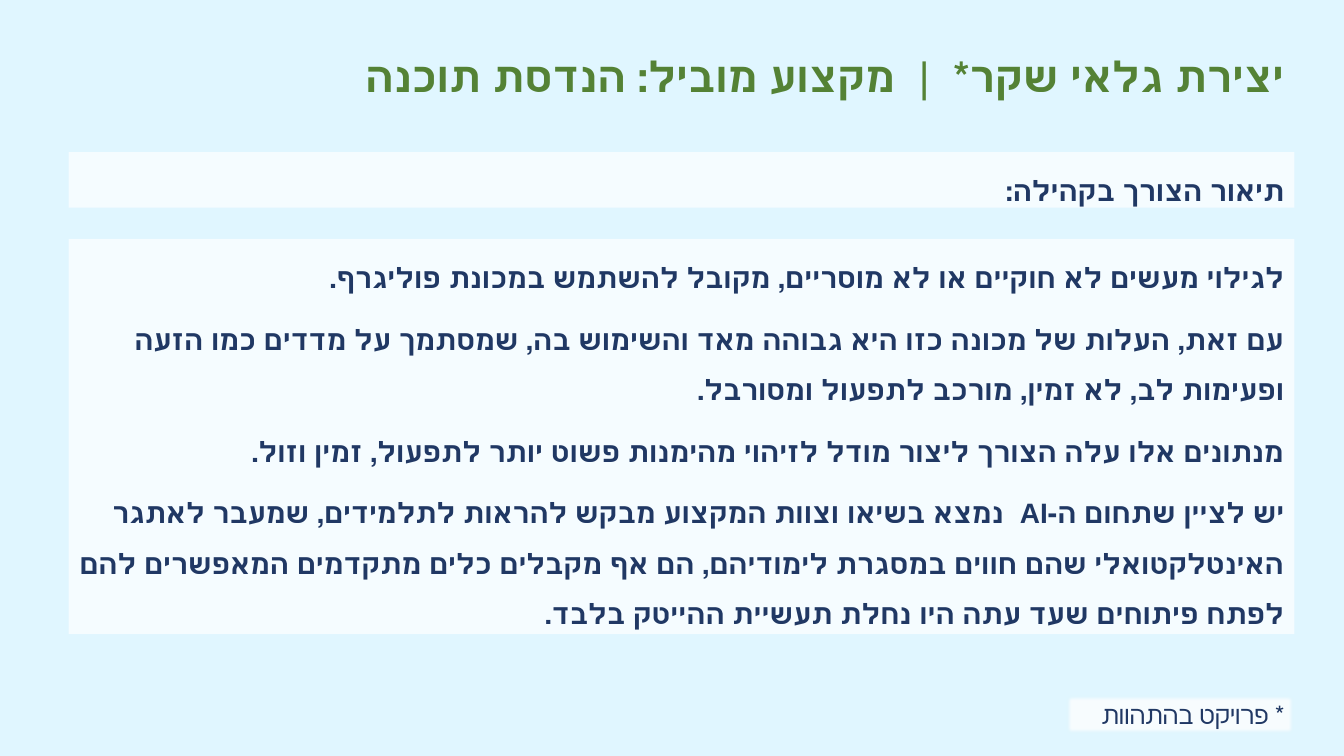
"""Builds the Hebrew slide that presents the lie detector project."""
from lxml.etree import SubElement
from pptx import Presentation
from pptx.dml.color import RGBColor
from pptx.enum.shapes import MSO_SHAPE
from pptx.enum.text import MSO_ANCHOR, MSO_AUTO_SIZE, PP_ALIGN
from pptx.oxml.ns import qn
from pptx.util import Inches, Pt

BACKGROUND = RGBColor(0xE0, 0xF6, 0xFF)
GREEN = RGBColor(0x54, 0x82, 0x35)
NAVY = RGBColor(0x20, 0x38, 0x64)
WHITE = RGBColor(0xFF, 0xFF, 0xFF)
FONT = "Arial"
RIGHT_EDGE = 12.84


def write(frame, paragraphs, size=20, color=NAVY, bold=True, spacing=None, after=0):
    frame.word_wrap = True
    frame.auto_size = MSO_AUTO_SIZE.NONE
    frame.vertical_anchor = MSO_ANCHOR.TOP
    for index, text in enumerate(paragraphs):
        paragraph = frame.paragraphs[0] if index == 0 else frame.add_paragraph()
        paragraph.alignment = PP_ALIGN.RIGHT
        paragraph._p.get_or_add_pPr().set("rtl", "1")
        paragraph.line_spacing = spacing
        paragraph.space_after = Pt(after)
        run = paragraph.add_run()
        run.text = text
        run.font.name = FONT
        run.font.size = Pt(size)
        run.font.bold = bold
        run.font.color.rgb = color


presentation = Presentation()
presentation.slide_width = Inches(13.33)
presentation.slide_height = Inches(7.5)
slide = presentation.slides.add_slide(presentation.slide_layouts[5])
slide.background.fill.solid()
slide.background.fill.fore_color.rgb = BACKGROUND

headline = slide.shapes.title
headline.left, headline.top = Inches(1.93), Inches(0.45)
headline.width, headline.height = Inches(10.91), Inches(0.61)
write(headline.text_frame, ["יצירת גלאי שקר*  |  מקצוע מוביל: הנדסת תוכנה"],
      size=30, color=GREEN)

need_heading = ["תיאור הצורך בקהילה:"]
need_description = [
    "לגילוי מעשים לא חוקיים או לא מוסריים, מקובל להשתמש במכונת פוליגרף.",
    "עם זאת, העלות של מכונה כזו היא גבוהה מאד והשימוש בה, שמסתמך על מדדים כמו "
    "הזעה ופעימות לב, לא זמין, מורכב לתפעול ומסורבל.",
    "מנתונים אלו עלה הצורך ליצור מודל לזיהוי מהימנות פשוט יותר לתפעול, זמין וזול.",
    "יש לציין שתחום ה-AI  נמצא בשיאו וצוות המקצוע מבקש להראות לתלמידים, שמעבר "
    "לאתגר האינטלקטואלי שהם חווים במסגרת לימודיהם, הם אף מקבלים כלים מתקדמים "
    "המאפשרים להם לפתח פיתוחים שעד עתה היו נחלת תעשיית ההייטק בלבד.",
]
footnote = ["* פרויקט בהתהוות"]

body_format = {"spacing": 1.5, "after": 8}
footnote_format = {"size": 18, "bold": False}
panels = [
    (need_heading, 1.51, 12.16, 0.55, 70, 0, body_format),
    (need_description, 2.37, 12.16, 3.92, 70, 0, body_format),
    (footnote, 6.89, 2.27, 0.4, 80, 2.5, footnote_format),
]
for paragraphs, top, width, height, opacity, soft_edge, text_format in panels:
    panel = slide.shapes.add_shape(
        MSO_SHAPE.RECTANGLE, Inches(RIGHT_EDGE - width), Inches(top),
        Inches(width), Inches(height))
    panel.shadow.inherit = False
    panel.line.fill.background()
    panel.fill.solid()
    panel.fill.fore_color.rgb = WHITE
    properties = panel._element.spPr
    fill_color = properties.find(qn("a:solidFill"))[0]
    SubElement(fill_color, qn("a:alpha"), val=str(opacity * 1000))
    if soft_edge:
        effects = properties.find(qn("a:effectLst"))
        SubElement(effects, qn("a:softEdge"), rad=str(Pt(soft_edge)))
    write(panel.text_frame, paragraphs, **text_format)

presentation.save("out.pptx")
